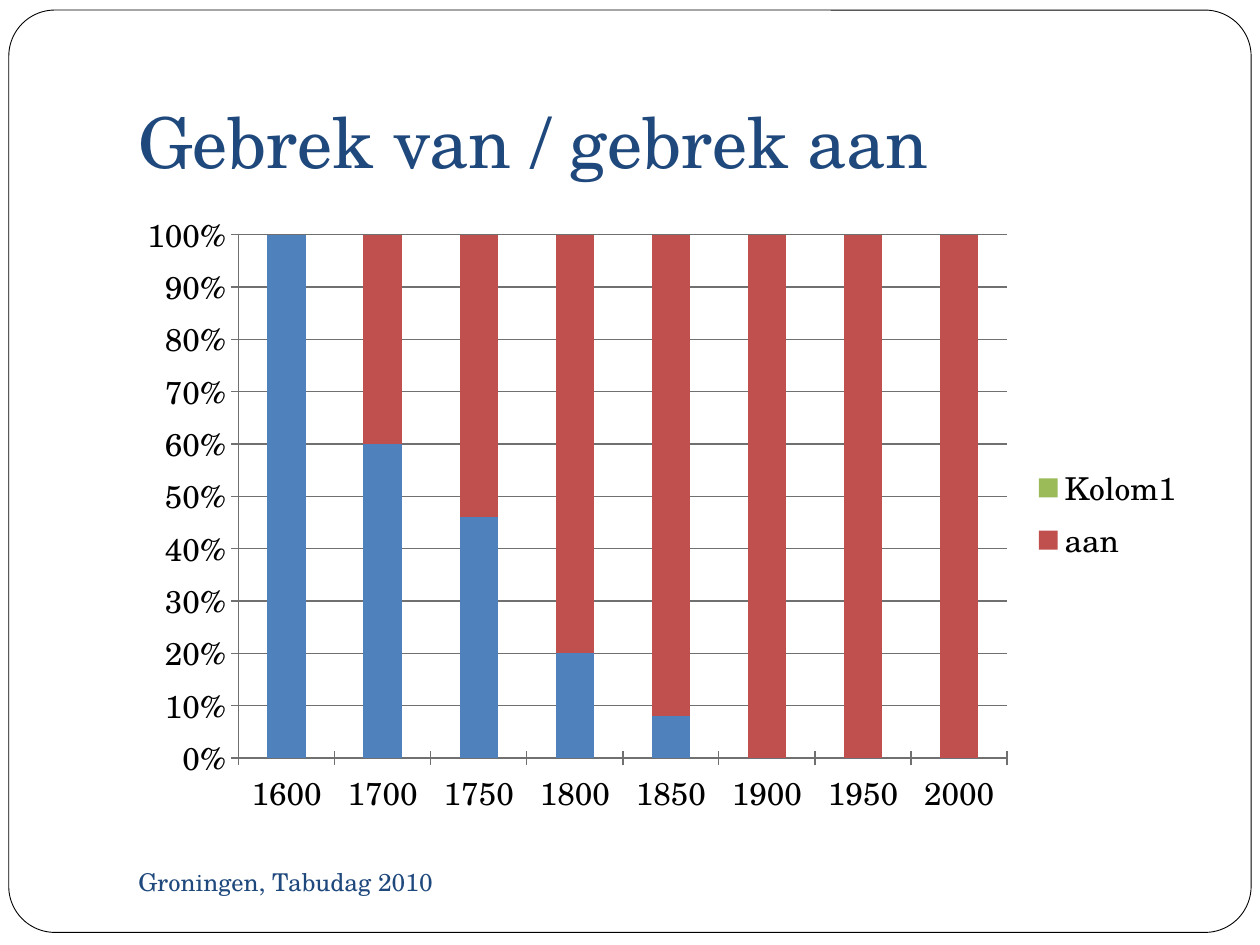
"""Build a slide with a stacked column chart of "gebrek van" and "gebrek aan"."""
import pptx
import pptx.chart.data
import pptx.dml.color
import pptx.enum.chart
import pptx.enum.shapes
import pptx.enum.text
import pptx.oxml
import pptx.oxml.ns
import pptx.util
from pptx.util import Inches

YEARS = ["1600", "1700", "1750", "1800", "1850", "1900", "1950", "2000"]
SERIES = [
    ("Series 1", [100, 60, 46, 20, 8, 0, 0, 0], "4F81BD"),
    ("aan", [0, 40, 54, 80, 92, 100, 100, 100], "C0504D"),
    ("Kolom1", [None] * len(YEARS), "9BBB59"),
]


def rgb(value):
    return pptx.dml.color.RGBColor.from_string(value)


def style_font(font, name, size, color):
    font.name = name
    font.size = pptx.util.Pt(size)
    font.color.rgb = rgb(color)


def write(frame, text, font, size, color, anchor, bottom=0.05):
    frame.word_wrap = True
    frame.auto_size = pptx.enum.text.MSO_AUTO_SIZE.NONE
    frame.vertical_anchor = anchor
    frame.margin_left = frame.margin_right = Inches(0.1)
    frame.margin_top = Inches(0.05)
    frame.margin_bottom = Inches(bottom)
    paragraph = frame.paragraphs[0]
    paragraph.alignment = pptx.enum.text.PP_ALIGN.LEFT
    run = paragraph.add_run()
    run.text = text
    style_font(run.font, font, size, color)


class SlideBuilder:
    font = "TeX Gyre Schola"
    accent = "1F497D"
    ink = "000000"
    paper = "FFFFFF"
    rule = "707070"

    def __init__(self, slide):
        self.slide = slide

    def border(self, left, top, width, height):
        border = self.slide.shapes.add_shape(
            pptx.enum.shapes.MSO_SHAPE.ROUNDED_RECTANGLE,
            Inches(left), Inches(top), Inches(width), Inches(height))
        border.adjustments[0] = 0.05
        border.shadow.inherit = False
        border.fill.solid()
        border.fill.fore_color.rgb = rgb(self.paper)
        border.line.color.rgb = rgb(self.ink)
        border.line.width = pptx.util.Pt(0.5)
        border.element.getparent().insert(2, border.element)

    def title(self, text, left, top, width, height):
        title = self.slide.shapes.title
        title.left, title.top = Inches(left), Inches(top)
        title.width, title.height = Inches(width), Inches(height)
        write(title.text_frame, text, font=self.font, size=40, color=self.accent,
              anchor=pptx.enum.text.MSO_ANCHOR.BOTTOM, bottom=0.1)

    def footer(self, text, left, top, width, height):
        footer = self.slide.shapes.add_textbox(
            Inches(left), Inches(top), Inches(width), Inches(height))
        write(footer.text_frame, text, font=self.font, size=14, color=self.accent,
              anchor=pptx.enum.text.MSO_ANCHOR.MIDDLE)

    def stacked_columns(self, categories, series, left, top, width, height):
        data = pptx.chart.data.CategoryChartData()
        data.categories = categories
        for name, values, _ in series:
            data.add_series(name, values)
        chart = self.slide.shapes.add_chart(
            pptx.enum.chart.XL_CHART_TYPE.COLUMN_STACKED_100,
            Inches(left), Inches(top), Inches(width), Inches(height), data).chart
        chart.has_title = False
        style_font(chart.font, self.font, 18, self.ink)

        plot = chart.plots[0]
        plot.vary_by_categories = False
        plot.overlap = 100
        plot.gap_width = 150
        for columns, (_, _, color) in zip(plot.series, series):
            columns.format.fill.solid()
            columns.format.fill.fore_color.rgb = rgb(color)

        chart.value_axis.has_major_gridlines = True
        chart.value_axis.tick_labels.number_format = "0%"
        chart.value_axis.tick_labels.number_format_is_linked = False
        for axis in (chart.category_axis, chart.value_axis):
            axis.major_tick_mark = pptx.enum.chart.XL_TICK_MARK.CROSS
        for part in (chart.category_axis, chart.value_axis,
                     chart.value_axis.major_gridlines):
            part.format.line.color.rgb = rgb(self.rule)
            part.format.line.width = pptx.util.Pt(0.75)
        self.legend(chart, hidden=0)

    def legend(self, chart, hidden):
        chart.has_legend = True
        chart.legend.position = pptx.enum.chart.XL_LEGEND_POSITION.RIGHT
        chart.legend.include_in_layout = False
        entry = pptx.oxml.parse_xml(
            f'<c:legendEntry {pptx.oxml.ns.nsdecls("c")}>'
            f'<c:idx val="{hidden}"/><c:delete val="1"/></c:legendEntry>')
        legend = chart.element.find(".//" + pptx.oxml.ns.qn("c:legend"))
        legend.find(pptx.oxml.ns.qn("c:legendPos")).addnext(entry)


def main():
    deck = pptx.Presentation()
    deck.slide_width, deck.slide_height = Inches(10), Inches(7.5)
    builder = SlideBuilder(deck.slides.add_slide(deck.slide_layouts[5]))
    builder.border(0.07, 0.08, 9.86, 7.32)
    builder.title("Gebrek van / gebrek aan", 1, 0.3, 8.5, 1.25)
    builder.footer("Groningen, Tabudag 2010", 1, 6.75, 4.33, 0.5)
    builder.stacked_columns(YEARS, SERIES, 1, 1.58, 8.5, 5)
    deck.save("out.pptx")


if __name__ == "__main__":
    main()
